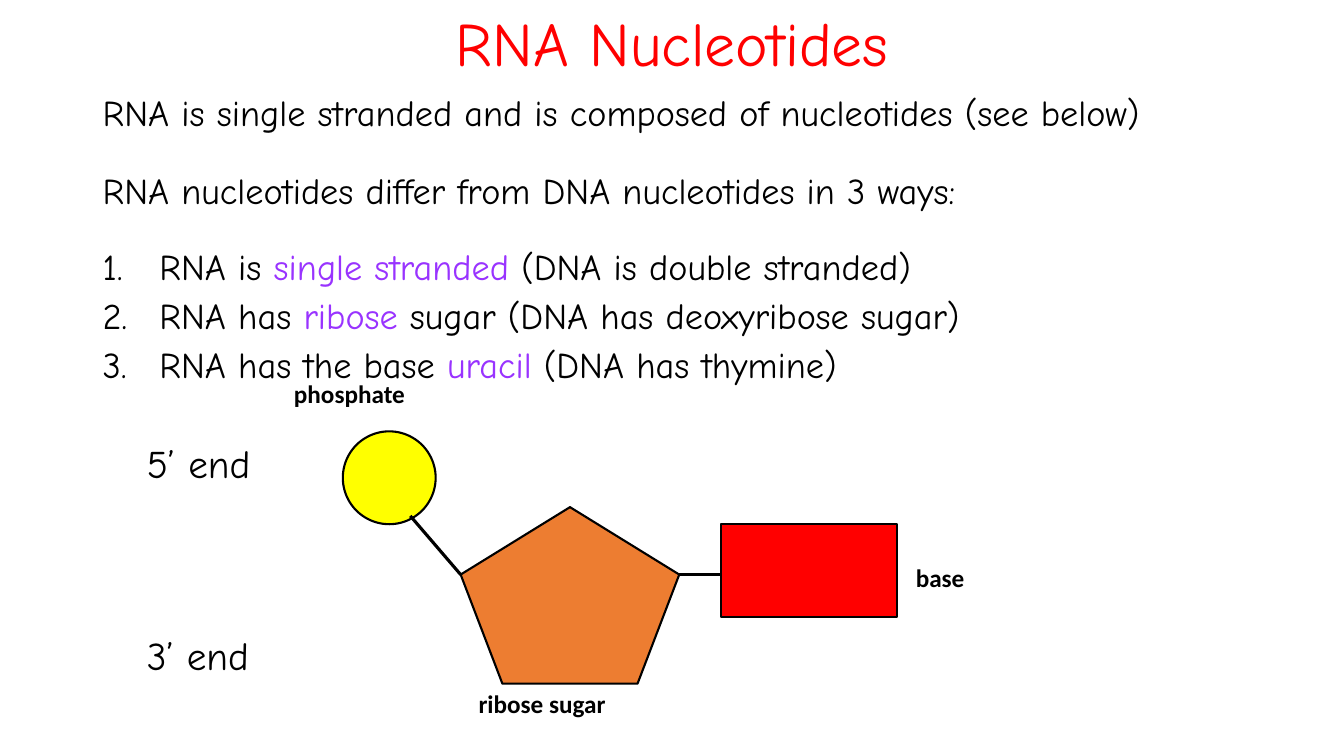
from dataclasses import dataclass

from lxml.etree import SubElement
from pptx import Presentation
from pptx.dml.color import RGBColor
from pptx.enum.shapes import MSO_CONNECTOR, MSO_SHAPE
from pptx.enum.text import MSO_ANCHOR, PP_ALIGN
from pptx.oxml.ns import qn
from pptx.util import Cm, Pt


@dataclass(frozen=True)
class Theme:
    """Fonts, colours, type sizes and line widths of the slide."""
    hand_font: str = "Comic Neue"
    label_font: str = "Calibri"
    black: str = "000000"
    title_color: str = "FF0000"
    keyword: str = "9933FF"
    phosphate: str = "FFFF00"
    sugar: str = "ED7D31"
    base: str = "FF0000"
    title_size: float = 44
    body_size: float = 25.9
    end_size: float = 28
    label_size: float = 18
    outline: float = 1.5
    bond: float = 2.25


THEME = Theme()

STATEMENTS = [
    ("RNA is single stranded and is composed of nucleotides (see below)", 0),
    ("RNA nucleotides differ from DNA nucleotides in 3 ways:", 30.6),
]
DIFFERENCES = [
    (("RNA is ", "single stranded ", "(DNA is double stranded)"), 29.8),
    (("RNA has ", "ribose", " sugar (DNA has deoxyribose sugar)"), 10),
    (("RNA has the base ", "uracil", " (DNA has thymine)"), 10),
]


def style_font(font, name, size, color, bold=False):
    """Set the face, size, colour and weight of a font."""
    font.name = name
    font.size = Pt(size)
    font.bold = bold
    font.color.rgb = RGBColor.from_string(color)


def add_text_box(slide, left, top, width, height):
    """Add a wrapping text box and return its text frame."""
    text_frame = slide.shapes.add_textbox(Cm(left), Cm(top), Cm(width), Cm(height)).text_frame
    text_frame.word_wrap = True
    return text_frame


def add_label(slide, text, left, top, width, name, size, bold=False):
    """Add a one-line label."""
    paragraph = add_text_box(slide, left, top, width, 1.45).paragraphs[0]
    paragraph.text = text
    style_font(paragraph.runs[0].font, name, size, THEME.black, bold)


def add_part(slide, kind, left, top, width, height, color):
    """Add one outlined and filled part of the nucleotide."""
    shape = slide.shapes.add_shape(kind, Cm(left), Cm(top), Cm(width), Cm(height))
    shape.shadow.inherit = False
    shape.fill.solid()
    shape.fill.fore_color.rgb = RGBColor.from_string(color)
    shape.line.color.rgb = RGBColor.from_string(THEME.black)
    shape.line.width = Pt(THEME.outline)


def add_bond(slide, start_x, start_y, end_x, end_y):
    """Add a straight bond between two parts."""
    connector = slide.shapes.add_connector(
        MSO_CONNECTOR.STRAIGHT, Cm(start_x), Cm(start_y), Cm(end_x), Cm(end_y))
    connector.line.color.rgb = RGBColor.from_string(THEME.black)
    connector.line.width = Pt(THEME.bond)
    SubElement(connector._element.spPr, qn("a:effectLst"))


def number_paragraph(paragraph):
    """Give a paragraph a hanging automatic number."""
    properties = paragraph._p.get_or_add_pPr()
    properties.set("marL", str(Cm(1.43)))
    properties.set("indent", str(-Cm(1.43)))
    SubElement(properties, qn("a:buFont"), typeface="+mj-lt")
    SubElement(properties, qn("a:buAutoNum"), type="arabicPeriod")


def add_title(slide, left, top, width, height):
    """Place the centred title."""
    text_frame = add_text_box(slide, left, top, width, height)
    text_frame.vertical_anchor = MSO_ANCHOR.MIDDLE
    paragraph = text_frame.paragraphs[0]
    paragraph.text = "RNA Nucleotides"
    paragraph.alignment = PP_ALIGN.CENTER
    paragraph.line_spacing = 0.9
    style_font(paragraph.runs[0].font, THEME.hand_font, THEME.title_size, THEME.title_color)


def add_body(slide, left, top, width, height):
    """Place the statements and the numbered differences."""
    text_frame = add_text_box(slide, left, top, width, height)
    rows = [((text,), gap) for text, gap in STATEMENTS] + DIFFERENCES
    for index, (pieces, gap) in enumerate(rows):
        paragraph = text_frame.add_paragraph() if index else text_frame.paragraphs[0]
        paragraph.line_spacing = 0.8
        paragraph.space_before = Pt(gap)
        if len(pieces) > 1:
            number_paragraph(paragraph)
        for position, piece in enumerate(pieces):
            run = paragraph.add_run()
            run.text = piece
            color = THEME.keyword if position == 1 else THEME.black
            style_font(run.font, THEME.hand_font, THEME.body_size, color)


def add_nucleotide(slide, left, top):
    """Draw the labelled nucleotide from its top left corner."""
    parts = [
        (MSO_SHAPE.REGULAR_PENTAGON, 4.45, 3.38, 5.51, 4.45, THEME.sugar),
        (MSO_SHAPE.OVAL, 1.48, 1.47, 2.34, 2.34, THEME.phosphate),
        (MSO_SHAPE.RECTANGLE, 11, 3.81, 4.45, 2.34, THEME.base),
    ]
    for kind, x, y, width, height, color in parts:
        add_part(slide, kind, left + x, top + y, width, height, color)
    bond_y = top + 5.08
    add_bond(slide, left + 3.18, top + 3.6, left + 4.45, bond_y)
    add_bond(slide, left + 9.96, bond_y, left + 11, bond_y)
    labels = [("ribose sugar", 4.65, 7.82, 6.55), ("phosphate", 0, 0, 5.51),
              ("base", 15.67, 4.65, 2.97)]
    for text, x, y, width in labels:
        add_label(slide, text, left + x, top + y, width,
                  THEME.label_font, THEME.label_size, bold=True)


def add_strand_ends(slide, left, top, width):
    """Place the names of the two strand ends."""
    for index, text in enumerate(("5’ end", "3’ end")):
        add_label(slide, text, left, top + index * 4.83, width,
                  THEME.hand_font, THEME.end_size)


def main():
    """Build and save the slide."""
    presentation = Presentation()
    presentation.slide_width = Cm(33.87)
    presentation.slide_height = Cm(19.05)
    slide = presentation.slides.add_slide(presentation.slide_layouts[6])
    add_title(slide, 2.34, 0, 29.21, 2.36)
    add_body(slide, 2.34, 2.36, 29.21, 7.67)
    add_nucleotide(slide, 7.16, 9.4)
    add_strand_ends(slide, 3.45, 10.95, 3.71)
    presentation.save("out.pptx")


if __name__ == "__main__":
    main()
